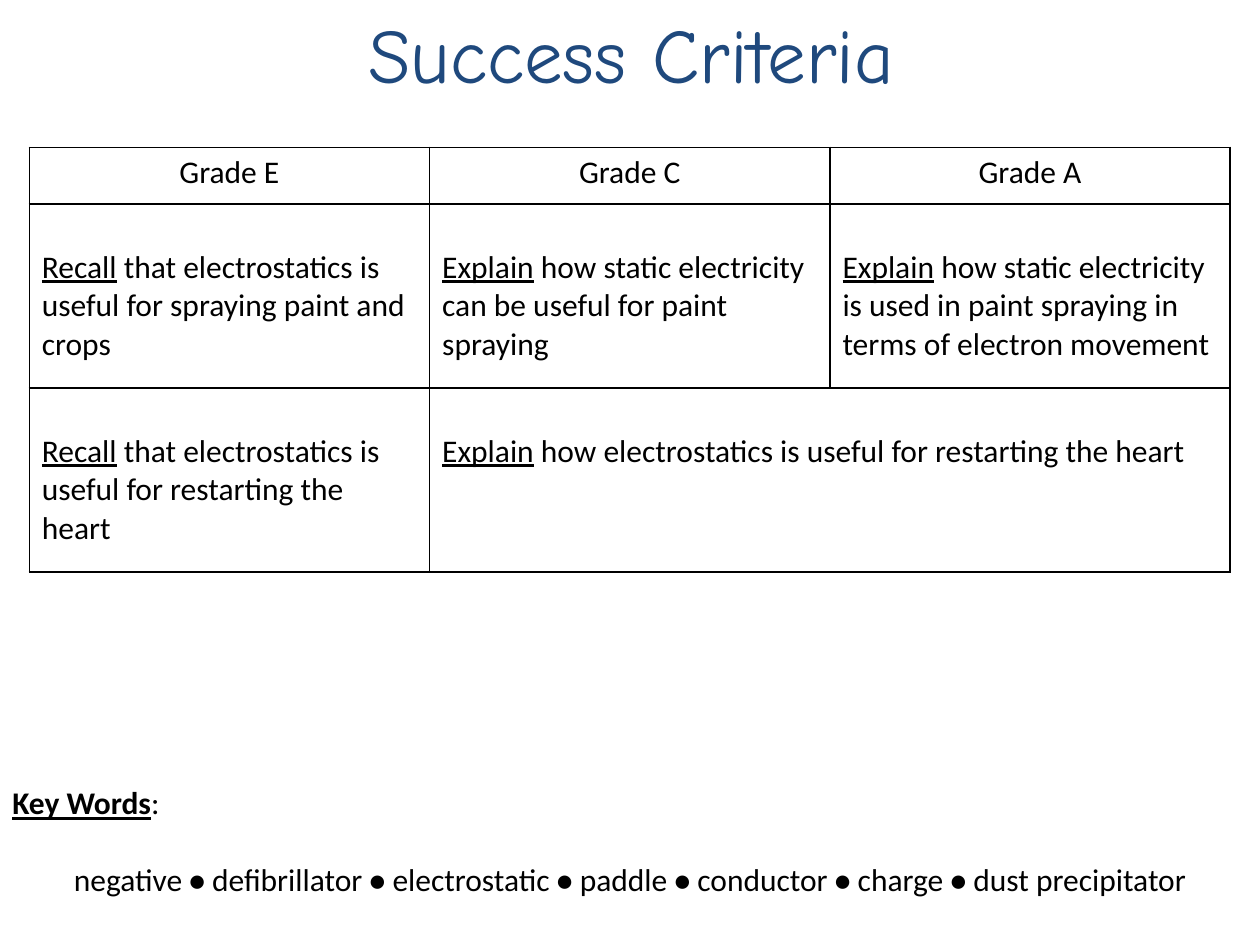
from lxml import etree
from pptx import Presentation
from pptx.dml.color import RGBColor
from pptx.enum import text
from pptx.oxml import ns
from pptx.util import Cm, Pt

BLACK = RGBColor(0, 0, 0)
NAVY = RGBColor(0x1F, 0x49, 0x7D)


def style(para, size=18, face="Calibri", color=BLACK, align=text.PP_ALIGN.LEFT):
    para.alignment = align
    para.font.size = Pt(size)
    para.font.name = face
    para.font.color.rgb = color


def border(cell):
    props = cell._tc.get_or_add_tcPr()
    for i, side in enumerate(("lnL", "lnR", "lnT", "lnB")):
        line = etree.Element(ns.qn("a:" + side), w=str(Pt(1)))
        fill = etree.SubElement(line, ns.qn("a:solidFill"))
        etree.SubElement(fill, ns.qn("a:srgbClr"), val=str(BLACK))
        props.insert(i, line)


deck = Presentation()
deck.slide_width, deck.slide_height = Cm(25.4), Cm(19.05)
slide = deck.slides.add_slide(deck.slide_layouts[6])
center = text.PP_ALIGN.CENTER

title = slide.shapes.add_textbox(Cm(1.3), Cm(0), Cm(22.86), Cm(3.18)).text_frame
title.word_wrap = True
title.text = "Success Criteria"
style(title.paragraphs[0], 44, "Comic Neue", NAVY, center)

rows = [
    [("", "Grade E"), ("", "Grade C"), ("", "Grade A")],
    [
        ("Recall", " that electrostatics is useful for spraying paint and crops"),
        ("Explain", " how static electricity can be useful for paint spraying"),
        ("Explain", " how static electricity is used in paint spraying in terms of electron movement"),
    ],
    [
        ("Recall", " that electrostatics is useful for restarting the heart"),
        ("Explain", " how electrostatics is useful for restarting the heart"),
    ],
]
table = slide.shapes.add_table(3, 3, Cm(0.59), Cm(2.97), Cm(24.21), Cm(8.56)).table
table.first_row = table.horz_banding = False
for col in table.columns:
    col.width = Cm(8.07)
for row, high in zip(table.rows, (1.14, 3.71, 3.71)):
    row.height = Cm(high)
table.cell(2, 1).merge(table.cell(2, 2))
for cell in table.iter_cells():
    cell.fill.background()
    border(cell)
for r, row in enumerate(rows):
    for c, (verb, rest) in enumerate(row):
        cell = table.cell(r, c)
        para = cell.text_frame.paragraphs[0]
        if verb:
            cell.margin_top = Cm(0.9)
            run = para.add_run()
            run.text = verb
            run.font.underline = True
        para.add_run().text = rest
        style(para, align=center if r == 0 else text.PP_ALIGN.LEFT)

words = ["negative", "defibrillator", "electrostatic", "paddle",
         "conductor", "charge", "dust precipitator"]
keys = slide.shapes.add_textbox(Cm(0), Cm(15.67), Cm(25.4), Cm(2.57)).text_frame
keys.word_wrap = True
keys.auto_size = text.MSO_AUTO_SIZE.SHAPE_TO_FIT_TEXT
head = keys.paragraphs[0]
run = head.add_run()
run.text = "Key Words"
run.font.bold = run.font.underline = True
head.add_run().text = ":"
style(head)
para = keys.add_paragraph()
for i, word in enumerate(words):
    if i:
        dot = para.add_run()
        dot.text = " • "
        dot.font.bold = True
    para.add_run().text = word
style(para, align=center)
para.space_before = Pt(22)

deck.save("out.pptx")
